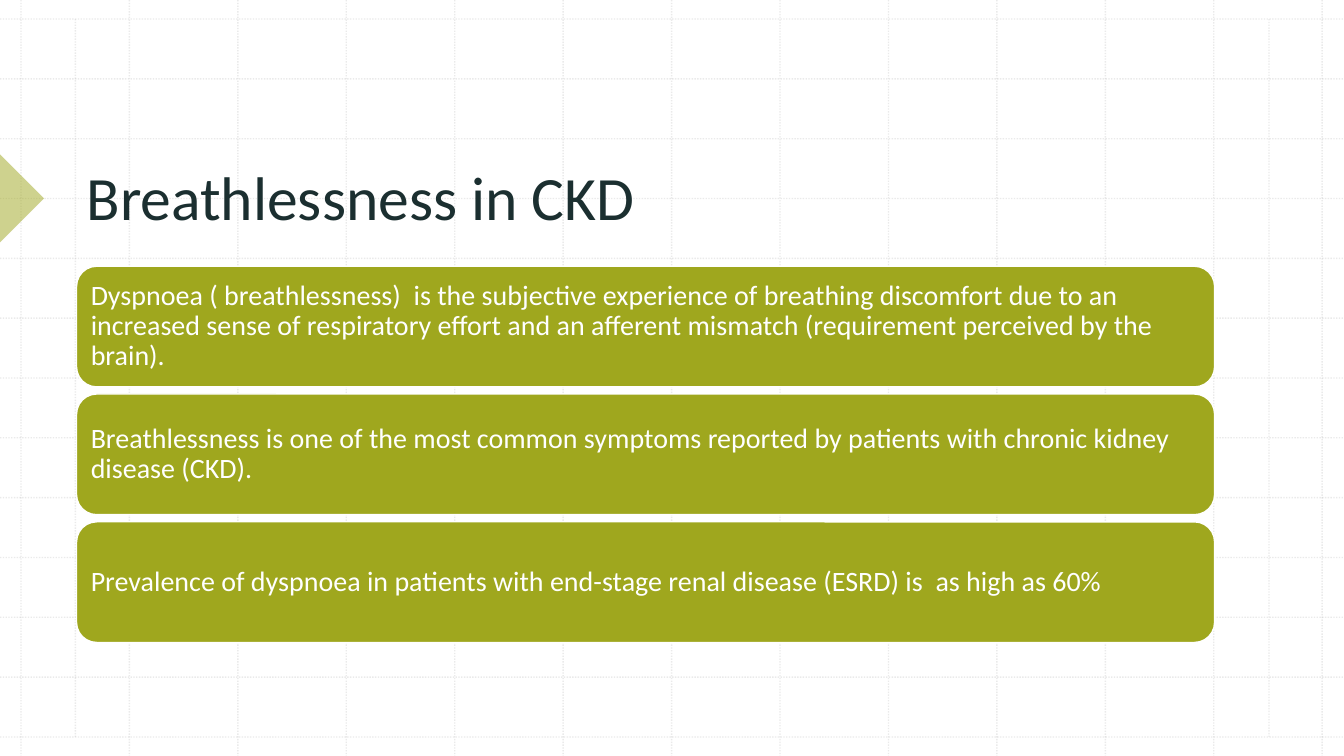
from dataclasses import dataclass

from lxml.etree import SubElement
from pptx import Presentation
from pptx.dml.color import RGBColor
from pptx.enum.dml import MSO_LINE
from pptx.enum.shapes import MSO_CONNECTOR, MSO_SHAPE
from pptx.enum.text import MSO_ANCHOR, PP_ALIGN
from pptx.oxml.ns import qn
from pptx.util import Cm, Pt

# Content
TITLE = "Breathlessness in CKD"
STATEMENTS = [
    "Dyspnoea ( breathlessness)  is the subjective experience of breathing discomfort due to an "
    "increased sense of respiratory effort and an afferent mismatch (requirement perceived by the brain).",
    "Breathlessness is one of the most common symptoms reported by patients with chronic kidney "
    "disease (CKD).",
    "Prevalence of dyspnoea in patients with end-stage renal disease (ESRD) is  as high as 60%",
]


@dataclass(frozen=True)
class Theme:
    font: str = "Calibri"
    title_size: int = 44
    body_size: int = 20
    olive: str = "9FA71E"
    dark: str = "1B2F30"
    white: str = "FFFFFF"
    grid: str = "BCBCBC"


THEME = Theme()

# Layout, in centimetres
WIDTH, HEIGHT = 33.87, 19.05
GRID_LEFT, GRID_RIGHT = 0.53, 33.32
GRID_TOP, GRID_BOTTOM = 0.48, 18.57
GRID_STEPS = 12
MARGIN_LINES = (1.9, 31.98)
LEFT, CONTENT_WIDTH = 1.93, 28.68
TITLE_TOP, TITLE_HEIGHT = 2.01, 4.01
BAR_TOP, BAR_HEIGHT, BAR_PITCH = 6.71, 3.04, 3.22
BAR_INSET = 0.21
MARKER_SIZE, MARKER_CENTER = 1.57, 5.0


def color(value):
    return RGBColor.from_string(value)


def set_alpha(fill_parent, percent):
    """Make the solid colour under an element partly transparent."""
    srgb = fill_parent.find(".//" + qn("a:srgbClr"))
    SubElement(srgb, qn("a:alpha")).set("val", str(percent * 1000))


def add_grid_line(slide, x1, y1, x2, y2):
    line = slide.shapes.add_connector(MSO_CONNECTOR.STRAIGHT, Cm(x1), Cm(y1), Cm(x2), Cm(y2))
    line.line.color.rgb = color(THEME.grid)
    line.line.width = Pt(1)
    line.line.dash_style = MSO_LINE.ROUND_DOT
    properties = line._element.spPr
    set_alpha(properties, 30)
    SubElement(properties, qn("a:effectLst"))


def add_grid(slide):
    for step in range(GRID_STEPS + 1):
        x = GRID_LEFT + step * (GRID_RIGHT - GRID_LEFT) / GRID_STEPS
        y = GRID_TOP + step * (GRID_BOTTOM - GRID_TOP) / GRID_STEPS
        add_grid_line(slide, x, 0, x, HEIGHT)
        add_grid_line(slide, 0, y, WIDTH, y)
    for x in MARGIN_LINES:
        add_grid_line(slide, x, GRID_TOP, x, GRID_BOTTOM)


def add_marker(slide):
    half = MARKER_SIZE / 2
    marker = slide.shapes.add_shape(MSO_SHAPE.RIGHT_TRIANGLE, Cm(-half), Cm(MARKER_CENTER - half),
                                    Cm(MARKER_SIZE), Cm(MARKER_SIZE))
    marker.rotation = 225
    marker.shadow.inherit = False
    marker.fill.solid()
    marker.fill.fore_color.rgb = color(THEME.olive)
    set_alpha(marker._element.spPr, 50)
    marker.line.fill.background()


def write(shape, text, size, text_color, anchor):
    frame = shape.text_frame
    frame.word_wrap = True
    frame.vertical_anchor = anchor
    paragraph = frame.paragraphs[0]
    paragraph.alignment = PP_ALIGN.LEFT
    paragraph.line_spacing = 0.9
    run = paragraph.add_run()
    run.text = text
    run.font.name = THEME.font
    run.font.size = Pt(size)
    run.font.color.rgb = color(text_color)


def add_title(slide):
    title = slide.shapes.title
    title.left, title.top = Cm(LEFT), Cm(TITLE_TOP)
    title.width, title.height = Cm(CONTENT_WIDTH), Cm(TITLE_HEIGHT)
    write(title, TITLE, THEME.title_size, THEME.dark, MSO_ANCHOR.BOTTOM)
    # Bring the title in front of the grid
    slide.shapes._spTree.append(title._element)


def add_bar(slide, index, text):
    bar = slide.shapes.add_shape(MSO_SHAPE.ROUNDED_RECTANGLE, Cm(LEFT), Cm(BAR_TOP + index * BAR_PITCH),
                                 Cm(CONTENT_WIDTH), Cm(BAR_HEIGHT))
    bar.shadow.inherit = False
    bar.fill.solid()
    bar.fill.fore_color.rgb = color(THEME.olive)
    bar.line.color.rgb = color(THEME.white)
    bar.line.width = Pt(1)
    frame = bar.text_frame
    frame.margin_left = frame.margin_right = Cm(BAR_INSET)
    frame.margin_top = frame.margin_bottom = Cm(BAR_INSET)
    write(bar, text, THEME.body_size, THEME.white, MSO_ANCHOR.MIDDLE)


def main():
    presentation = Presentation()
    presentation.slide_width, presentation.slide_height = Cm(WIDTH), Cm(HEIGHT)
    slide = presentation.slides.add_slide(presentation.slide_layouts.get_by_name("Title Only"))

    add_grid(slide)
    add_marker(slide)
    add_title(slide)
    for index, text in enumerate(STATEMENTS):
        add_bar(slide, index, text)

    presentation.save("out.pptx")


if __name__ == "__main__":
    main()
